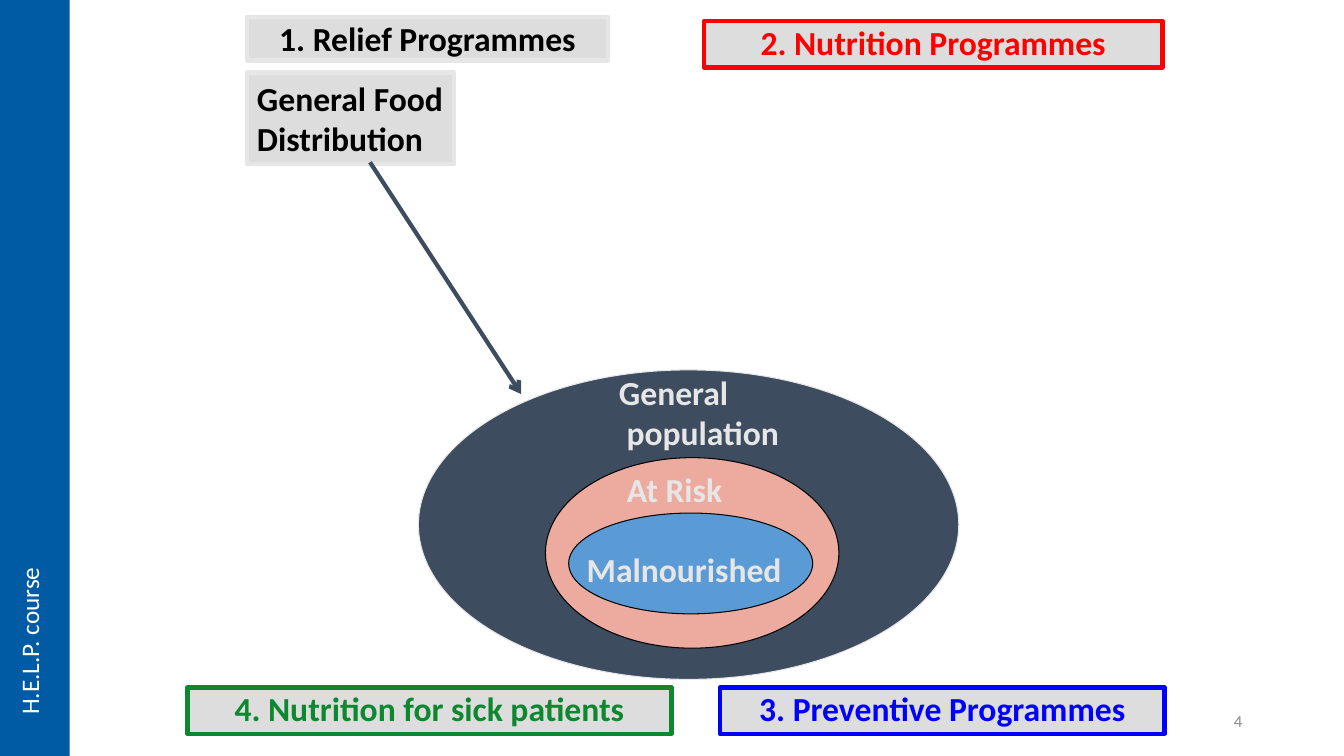
from dataclasses import dataclass

from lxml import etree
from pptx import Presentation
from pptx.dml.color import RGBColor
from pptx.enum import shapes, text
from pptx.oxml import ns
from pptx.util import Emu, Pt

PX = 9144  # 100 px to the inch
FONT = "Calibri"

WHITE = RGBColor(0xFF, 0xFF, 0xFF)
BLACK = RGBColor(0x00, 0x00, 0x00)
PALE = RGBColor(0xE7, 0xE6, 0xE6)
PANEL = RGBColor(0xDD, 0xDD, 0xDD)
GREY = RGBColor(0x8C, 0x8C, 0x8C)
SLATE = RGBColor(0x3D, 0x4C, 0x5F)
SALMON = RGBColor(0xEC, 0xAB, 0x9E)
SKY = RGBColor(0x5B, 0x9B, 0xD5)
BRAND_BLUE = RGBColor(0x00, 0x5B, 0xA4)
RED = RGBColor(0xFF, 0x00, 0x00)
GREEN = RGBColor(0x0E, 0x88, 0x2E)
BLUE = RGBColor(0x00, 0x00, 0xFF)

LEFT, CENTER, RIGHT = text.PP_ALIGN.LEFT, text.PP_ALIGN.CENTER, text.PP_ALIGN.RIGHT
OVAL, RECT = shapes.MSO_SHAPE.OVAL, shapes.MSO_SHAPE.RECTANGLE

Box = tuple[int, int, int, int]


@dataclass
class Group:
    box: Box
    fill: RGBColor
    outline: RGBColor


@dataclass
class Label:
    box: Box
    lines: tuple[str, ...]
    color: RGBColor = PALE
    size: int = 24
    bold: bool = True
    align: text.PP_ALIGN = LEFT
    spacing: float = 1.0


@dataclass
class Programme:
    label: Label
    outline: RGBColor


def emu(*lengths: int) -> list[Emu]:
    return [Emu(length * PX) for length in lengths]


def draw_shape(slide, kind, box: Box, fill: RGBColor, outline=None, width: float = 0.75):
    shape = slide.shapes.add_shape(kind, *emu(*box))
    shape.shadow.inherit = False
    shape.fill.solid()
    shape.fill.fore_color.rgb = fill
    if outline is None:
        shape.line.fill.background()
    else:
        shape.line.color.rgb = outline
        shape.line.width = Pt(width)
    return shape


def write(frame, label: Label) -> None:
    frame.word_wrap = True
    frame.vertical_anchor = text.MSO_ANCHOR.TOP
    for index, line in enumerate(label.lines):
        paragraph = frame.add_paragraph() if index else frame.paragraphs[0]
        paragraph.alignment = label.align
        paragraph.line_spacing = label.spacing
        run = paragraph.add_run()
        run.text = line
        run.font.name = FONT
        run.font.size = Pt(label.size)
        run.font.bold = label.bold
        run.font.color.rgb = label.color


def draw_label(slide, label: Label):
    frame = slide.shapes.add_textbox(*emu(*label.box)).text_frame
    write(frame, label)
    return frame


def draw_programme(slide, programme: Programme) -> None:
    label = programme.label
    panel = draw_shape(slide, RECT, label.box, PANEL, programme.outline, 3)
    write(panel.text_frame, label)


def draw_arrow(slide, start: tuple[int, int], end: tuple[int, int]) -> None:
    arrow = slide.shapes.add_connector(shapes.MSO_CONNECTOR.STRAIGHT, *emu(*start, *end))
    arrow.line.color.rgb = SLATE
    arrow.line.width = Pt(3)
    etree.SubElement(arrow.line._get_or_add_ln(), ns.qn("a:tailEnd"), type="arrow")
    etree.SubElement(arrow._element.spPr, ns.qn("a:effectLst"))


def heading(box: Box, wording: str, color: RGBColor, outline: RGBColor) -> Programme:
    return Programme(Label(box, (wording,), color, align=CENTER, spacing=0.9), outline)


POPULATION = [
    Group((415, 367, 536, 307), SLATE, PALE),
    Group((541, 454, 291, 189), SALMON, BLACK),
    Group((564, 509, 242, 100), SKY, BLACK),
]
POPULATION_LABELS = [
    Label((604, 364, 189, 91), ("General", " population")),
    Label((612, 460, 142, 50), ("At Risk",)),
    Label((572, 540, 231, 50), ("Malnourished",)),
]
PROGRAMMES = [
    heading((245, 17, 358, 43), "1. Relief Programmes", BLACK, PALE),
    Programme(Label((245, 72, 205, 91), ("General Food Distribution",), BLACK), PALE),
    heading((698, 21, 455, 46), "2. Nutrition Programmes", RED, RED),
    heading((714, 682, 441, 46), "3. Preventive Programmes", BLUE, BLUE),
    heading((186, 682, 480, 46), "4. Nutrition for sick patients", GREEN, GREEN),
]
COURSE = Label((9, 561, 50, 158), ("H.E.L.P. course",), WHITE, 18, False)
PAGE_NUMBER = Label((942, 695, 300, 40), ("4",), GREY, 12, False, RIGHT)


def main() -> None:
    deck = Presentation()
    deck.slide_width, deck.slide_height = emu(1333, 750)
    slide = deck.slides.add_slide(deck.slide_layouts[6])

    # Nested population groups
    for group in POPULATION:
        draw_shape(slide, OVAL, group.box, group.fill, group.outline)
    for label in POPULATION_LABELS:
        draw_label(slide, label)

    # Programmes, and the arrow from food distribution to the population
    for programme in PROGRAMMES:
        draw_programme(slide, programme)
    draw_arrow(slide, (367, 161), (517, 391))

    # Side band with the course name
    draw_shape(slide, RECT, (0, 0, 69, 750), BRAND_BLUE)
    course = draw_label(slide, COURSE)
    course.word_wrap = False
    course._txBody.bodyPr.set("vert", "vert270")

    # Slide number
    draw_label(slide, PAGE_NUMBER).vertical_anchor = text.MSO_ANCHOR.MIDDLE

    deck.save("out.pptx")


if __name__ == "__main__":
    main()
